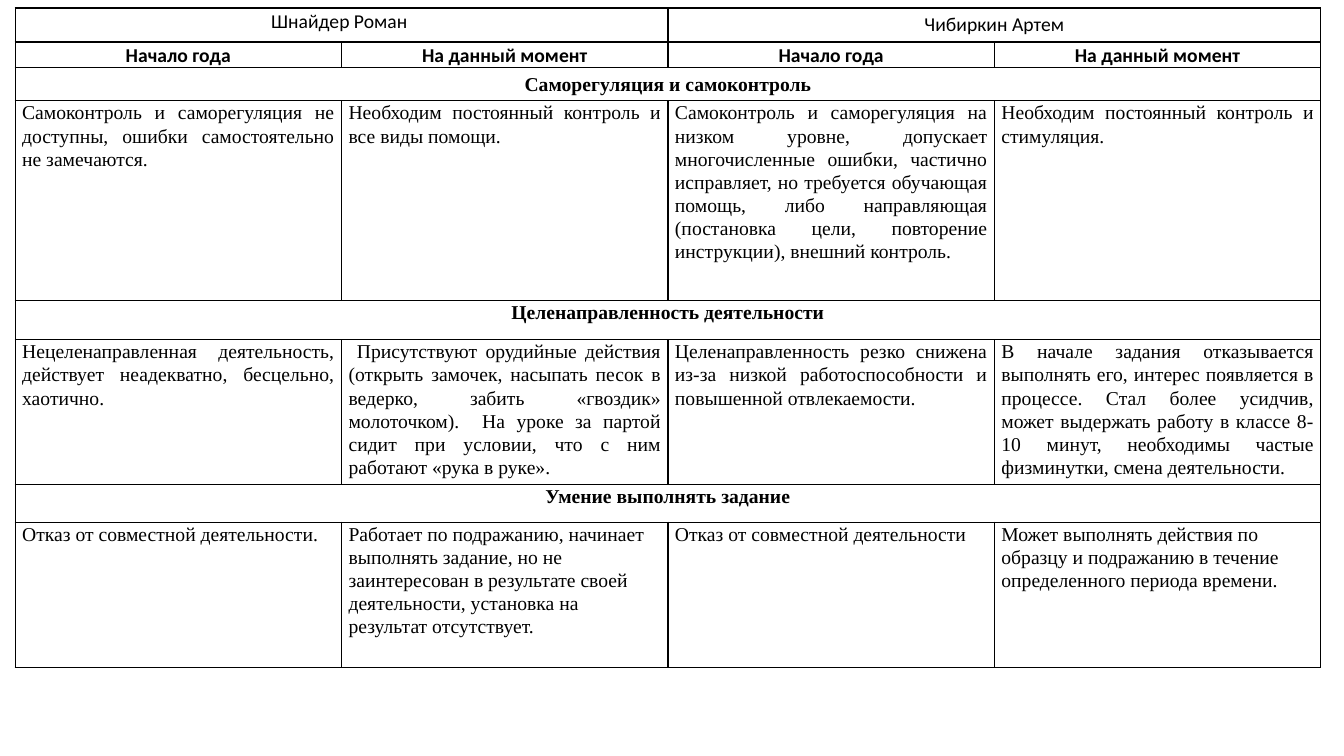
from lxml import etree
from pptx import Presentation, util as u
from pptx.dml.color import RGBColor
from pptx.enum import text
from pptx.oxml import ns

COLORS = {"ink": "000000", "paper": "FFFFFF"}
SANS, SERIF = "Calibri", "Times New Roman"
CENTER, JUSTIFY, LEFT = (
    text.PP_ALIGN.CENTER, text.PP_ALIGN.JUSTIFY, text.PP_ALIGN.LEFT)

SLIDE_WIDTH, SLIDE_HEIGHT = u.Inches(13.33), u.Inches(7.5)
TABLE_LEFT, TABLE_TOP, TABLE_WIDTH = 0.15, 0.08, 12.95
COLUMN_COUNT = 4
ROW_HEIGHTS = [0.26, 0.2, 0.26, 1.98, 0.39, 1.44, 0.37, 1.44]

PUPILS = ["Шнайдер Роман ", "Чибиркин Артем"]
PERIODS = ["Начало года", "На данный момент"]

# Each section: title, one text per column, alignment of each text
SECTIONS = [
    ("Саморегуляция и самоконтроль", [
        "Самоконтроль и саморегуляция не доступны, ошибки самостоятельно "
        "не замечаются.",
        "Необходим постоянный контроль и все виды помощи.",
        "Самоконтроль и саморегуляция на низком уровне, допускает "
        "многочисленные ошибки, частично исправляет, но требуется обучающая "
        "помощь, либо направляющая (постановка цели, повторение инструкции), "
        "внешний контроль.",
        "Необходим постоянный контроль и стимуляция.",
    ], [JUSTIFY] * COLUMN_COUNT),
    ("Целенаправленность деятельности", [
        "Нецеленаправленная деятельность, действует неадекватно, бесцельно, "
        "хаотично.",
        " Присутствуют орудийные действия (открыть замочек, насыпать песок в "
        "ведерко, забить «гвоздик» молоточком).  На уроке за партой сидит "
        "при условии, что с ним работают «рука в руке».",
        "Целенаправленность резко снижена из-за низкой работоспособности и "
        "повышенной отвлекаемости.",
        "В начале задания отказывается выполнять его, интерес появляется в "
        "процессе. Стал более усидчив, может выдержать работу в классе 8-10 "
        "минут, необходимы частые физминутки, смена деятельности.",
    ], [JUSTIFY] * COLUMN_COUNT),
    ("Умение выполнять задание", [
        "Отказ от совместной деятельности.",
        "Работает по подражанию, начинает выполнять задание, но не "
        "заинтересован в результате своей деятельности, установка на "
        "результат отсутствует.",
        "Отказ от совместной деятельности",
        "Может выполнять действия по образцу и подражанию в течение "
        "определенного периода времени.",
    ], [JUSTIFY, LEFT] * 2),
]


def write_cell(cell, words, font=SERIF, bold=False, align=CENTER,
               spacing=1.07, tight=True):
    if tight:
        cell.margin_left = cell.margin_right = u.Inches(0.07)
        cell.margin_top = cell.margin_bottom = 0
    paragraph = cell.text_frame.paragraphs[0]
    paragraph.alignment = align
    if spacing:
        paragraph.line_spacing = spacing
    run = paragraph.add_run()
    run.text = words
    run.font.name = font
    run.font.size = u.Pt(14)
    run.font.bold = bold
    run.font.color.rgb = RGBColor.from_string(COLORS["ink"])


def style_cell(cell):
    properties = cell._tc.get_or_add_tcPr()
    for side in ("lnL", "lnR", "lnT", "lnB"):
        line = etree.SubElement(properties, ns.qn(f"a:{side}"), w=str(u.Pt(1)))
        fill = etree.SubElement(line, ns.qn("a:solidFill"))
        etree.SubElement(fill, ns.qn("a:srgbClr"), val=COLORS["ink"])
    cell.fill.solid()
    cell.fill.fore_color.rgb = RGBColor.from_string(COLORS["paper"])


def add_grid(slide):
    frame = slide.shapes.add_table(
        len(ROW_HEIGHTS), COLUMN_COUNT, u.Inches(TABLE_LEFT),
        u.Inches(TABLE_TOP), u.Inches(TABLE_WIDTH),
        u.Inches(sum(ROW_HEIGHTS)))
    table = frame.table
    table.first_row = table.horz_banding = False
    for row, height in zip(table.rows, ROW_HEIGHTS):
        row.height = u.Inches(height)
    for cell in table.iter_cells():
        style_cell(cell)
    return table


def merge_across(table, row, column, count):
    cell = table.cell(row, column)
    cell.merge(table.cell(row, column + count - 1))
    return cell


def add_headings(table):
    span = len(PERIODS)
    for index, pupil in enumerate(PUPILS):
        first = index == 0
        write_cell(merge_across(table, 0, index * span, span), pupil,
                   font=SANS, tight=first, spacing=1.07 if first else None)
    for column in range(COLUMN_COUNT):
        write_cell(table.cell(1, column), PERIODS[column % span],
                   font=SANS, bold=True)


def add_section(table, row, title, notes, alignments):
    write_cell(merge_across(table, row, 0, COLUMN_COUNT), title,
               bold=True, tight=row > 2)
    for column, (note, align) in enumerate(zip(notes, alignments)):
        write_cell(table.cell(row + 1, column), note, align=align)


def main():
    presentation = Presentation()
    presentation.slide_width = SLIDE_WIDTH
    presentation.slide_height = SLIDE_HEIGHT
    slide = presentation.slides.add_slide(presentation.slide_layouts[6])

    # Table with headings and three sections of two rows each
    table = add_grid(slide)
    add_headings(table)
    for index, section in enumerate(SECTIONS):
        add_section(table, 2 + 2 * index, *section)

    presentation.save("out.pptx")


if __name__ == "__main__":
    main()
